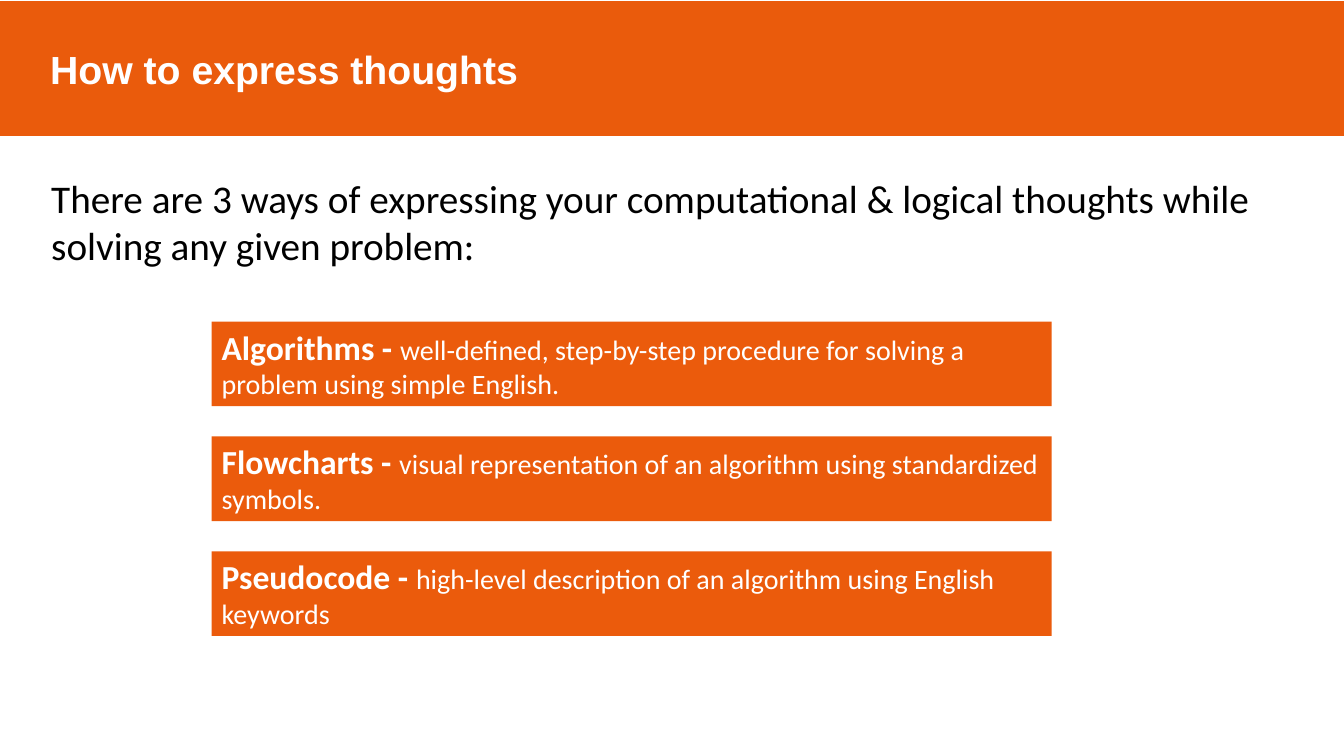
from pptx import Presentation
from pptx import util as u
from pptx.dml.color import RGBColor
from pptx.enum import shapes, text

# Content
TITLE = "How to express thoughts"
INTRO = ("There are 3 ways of expressing your computational & logical thoughts "
         "while solving any given problem:")
WAYS = [
    ("Algorithms - ", "well-defined, step-by-step procedure for solving a "
                      "problem using simple English."),
    ("Flowcharts - ", "visual representation of an algorithm using "
                      "standardized symbols."),
    ("Pseudocode - ", "high-level description of an algorithm using English "
                      "keywords"),
]
COLORS = {"banner": "EA5B0C", "card": "EB5B0C", "white": "FFFFFF", "black": "000000"}

# Layout in inches
WIDTH, HEIGHT = 13.33, 7.5
BANNER = (0, 0.02, WIDTH, 1.32)
INTRO_BOX = (0.41, 1.68, 12.52, 1.04)
CARD_LEFT, CARD_TOP, CARD_W, CARD_H = 2.1, 3.19, 8.33, 0.84
CARD_PITCH = 1.14


def rgb(name):
    return RGBColor.from_string(COLORS[name])


def add_run(p, words, size, color, font="Calibri", bold=False):
    r = p.add_run()
    r.text = words
    r.font.name, r.font.size, r.font.bold = font, u.Pt(size), bold
    r.font.color.rgb = rgb(color)


def add_block(slide, box, fill, anchor):
    sp = slide.shapes.add_shape(shapes.MSO_SHAPE.RECTANGLE, *map(u.Inches, box))
    sp.shadow.inherit = False
    sp.fill.solid()
    sp.fill.fore_color.rgb = rgb(fill)
    sp.line.fill.background()
    tf = sp.text_frame
    tf.word_wrap = True
    tf.vertical_anchor = anchor
    tf.paragraphs[0].alignment = text.PP_ALIGN.LEFT
    return sp


prs = Presentation()
prs.slide_width, prs.slide_height = u.Inches(WIDTH), u.Inches(HEIGHT)
s = prs.slides.add_slide(prs.slide_layouts[6])

# Introduction
tf = s.shapes.add_textbox(*map(u.Inches, INTRO_BOX)).text_frame
tf.word_wrap = True
add_run(tf.paragraphs[0], INTRO, 28, "black")

# Title banner
sp = add_block(s, BANNER, "banner", text.MSO_ANCHOR.MIDDLE)
sp.line.color.rgb = rgb("banner")
sp.line.width = u.Pt(1)
p = sp.text_frame.paragraphs[0]
p._p.get_or_add_pPr().set("marL", str(u.Inches(0.4)))
add_run(p, TITLE, 28, "white", "Arial", True)

# One card for each way
for i, (name, meaning) in enumerate(WAYS):
    box = (CARD_LEFT, CARD_TOP + i * CARD_PITCH, CARD_W, CARD_H)
    sp = add_block(s, box, "card", text.MSO_ANCHOR.TOP)
    p = sp.text_frame.paragraphs[0]
    add_run(p, name, 24, "white", bold=True)
    add_run(p, meaning, 20, "white")

prs.save("out.pptx")
